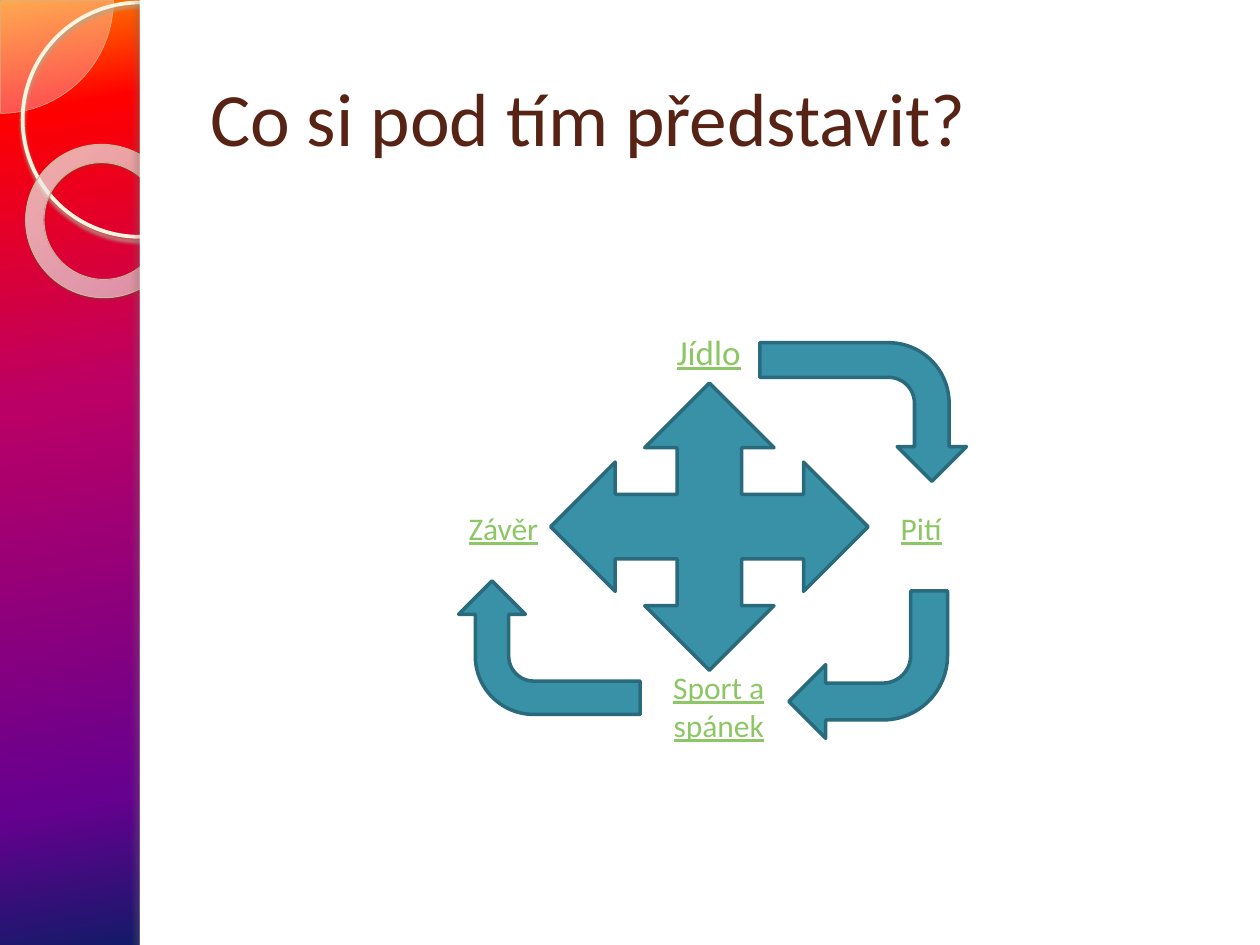
from lxml import etree
from pptx import Presentation
from pptx.dml.color import RGBColor
from pptx.enum.shapes import MSO_SHAPE
from pptx.enum.text import MSO_ANCHOR, MSO_AUTO_SIZE, PP_ALIGN
from pptx.oxml import parse_xml
from pptx.oxml.ns import nsdecls, qn
from pptx.util import Inches, Pt

PIE, ELLIPSE, DONUT, RECT = MSO_SHAPE.PIE, MSO_SHAPE.OVAL, MSO_SHAPE.DONUT, MSO_SHAPE.RECTANGLE
QUAD, BENT = MSO_SHAPE.QUAD_ARROW, MSO_SHAPE.BENT_ARROW
LEFT, CENTER, RIGHT = PP_ALIGN.LEFT, PP_ALIGN.CENTER, PP_ALIGN.RIGHT
MIDDLE, TOP = MSO_ANCHOR.MIDDLE, MSO_ANCHOR.TOP
GROW, FIXED = MSO_AUTO_SIZE.SHAPE_TO_FIT_TEXT, MSO_AUTO_SIZE.NONE

# Grid of 100 columns by 75 rows
CELL = Inches(0.1)
COLUMNS, ROWS = 100, 75
STRIP = 11.1  # columns taken by the coloured strip

deck = Presentation()
deck.slide_width, deck.slide_height = COLUMNS * CELL, ROWS * CELL
page = deck.slides.add_slide(deck.slide_layouts[6])


def paint(fill, color):
    """Solid colour for any fill, or no fill when the colour is None."""
    if color is None:
        fill.background()
    else:
        fill.solid()
        fill.fore_color.rgb = RGBColor.from_string(color)


def write(text, cells, size=18, color="8DC765", align=LEFT, anchor=TOP,
          underline=True, fit=GROW):
    box = page.shapes.add_textbox(*[int(value * CELL) for value in cells])
    frame = box.text_frame
    frame.word_wrap, frame.auto_size, frame.vertical_anchor = True, fit, anchor
    para = frame.paragraphs[0]
    para.alignment = align
    span = para.add_run()
    span.text = text
    span.font.name, span.font.size = "Calibri", Pt(size)
    if underline:
        span.font.underline = True
    paint(span.font.fill, color)


# Shapes: kind, cells, rotation, adjustments, fill, opacity, line, width, shadow
# Shadow: colour, opacity, blur, distance, angle
TEAL = ([], "3891A7", 100, "296B7C", 2, None)
shapes = [
    (PIE, (-8.9, -8.9, 17.9, 17.9), 0, [0, 54.02], "FEFAF4", 33, "D3C39F", 0.25, None),
    (ELLIPSE, (1.8, 0.2, 18.6, 18.6), 0, [], None, 100, "FFF5DE", 2.15,
     ("B0A68F", 85, 2, 2, 90)),
    (DONUT, (2, 11.5, 12.3, 12.1), 38.6, [0.12], "FFFCF6", 100, "C7B893", 0.58,
     ("5A5444", 35, 1, 1.2, 75)),
    (RECT, (STRIP, 0, COLUMNS - STRIP, ROWS), 0, [], "FFFFFF", 100, None, 0, None),
    (RECT, (STRIP, 0, 0.8, ROWS), 0, [], "FFFFFF", 100, None, 0,
     ("736F63", 25, 3, 3, 180)),
    (QUAD, (43.7, 30.4, 25.2, 22.8), 0, *TEAL),
    (BENT, (63, 24.5, 11, 16.4), 90, *TEAL),
    (BENT, (38.3, 44.2, 10.6, 14.4), 270, *TEAL),
    (BENT, (62.6, 46.9, 12.6, 11.7), 180, *TEAL),
]
for kind, cells, turn, adjustments, color, opacity, edge, width, shadow in shapes:
    shape = page.shapes.add_shape(kind, *[int(value * CELL) for value in cells])
    shape.rotation = turn
    for index, value in enumerate(adjustments):
        shape.adjustments[index] = value
    paint(shape.fill, color)
    paint(shape.line.fill, edge)
    if edge:
        shape.line.width = Pt(width)
    shape.shadow.inherit = False
    properties = shape._element.spPr
    if opacity < 100:
        tint = properties.find(qn("a:solidFill"))[0]
        etree.SubElement(tint, qn("a:alpha"), val=str(opacity * 1000))
    if shadow:
        tone, strength, blur, distance, angle = shadow
        properties.find(qn("a:effectLst")).append(parse_xml(
            f'<a:outerShdw {nsdecls("a")} blurRad="{Pt(blur)}" dist="{Pt(distance)}" '
            f'dir="{angle * 60000}" algn="tl" rotWithShape="0"><a:srgbClr val="{tone}">'
            f'<a:alpha val="{strength * 1000}"/></a:srgbClr></a:outerShdw>'))
    if kind == DONUT:
        ring = properties

# Gradients of the background and the ring: position, colour, opacity
paint(page.background.fill, "FF0000")
backdrop = page._element.cSld.find(qn("p:bg")).find(qn("p:bgPr"))
gradients = [
    (backdrop,
     [(0, "002060", 100), (14, "002060", 100), (30, "66008F", 100), (65, "BA0066", 100),
      (90, "FF0000", 100), (100, "FF8200", 100)],
     f'<a:lin ang="{260 * 60000}" scaled="0"/>'),
    (ring,
     [(0, "FFFCF6", 70), (70, "FFFEFB", 55), (100, "F0D28E", 60)],
     '<a:path path="circle"><a:fillToRect l="-408000" t="-50000" r="508000" b="150000"/>'
     '</a:path>'),
]
for owner, stops, direction in gradients:
    marks = "".join(
        f'<a:gs pos="{place * 1000}"><a:srgbClr val="{color}">'
        f'<a:alpha val="{opacity * 1000}"/></a:srgbClr></a:gs>'
        for place, color, opacity in stops)
    owner.replace(owner.find(qn("a:solidFill")), parse_xml(
        f'<a:gradFill {nsdecls("a")} rotWithShape="1"><a:gsLst>{marks}</a:gsLst>'
        f'{direction}</a:gradFill>'))

# Title
write("Co si pod tím představit?", (15.7, 3, 82, 12.5), size=43, color="572314",
      anchor=MIDDLE, underline=False, fit=FIXED)

# Labels around the cross
write("Jídlo", (47.6, 25.7, 17.3, 4.4), size=20, align=CENTER)
write("Pití", (70.5, 39.9, 17.3, 4))
write("Sport a spánek", (49.2, 52.5, 15.7, 7.1), align=CENTER)
write("Závěr", (29.5, 39.9, 14.2, 4), align=RIGHT)

deck.save("out.pptx")
